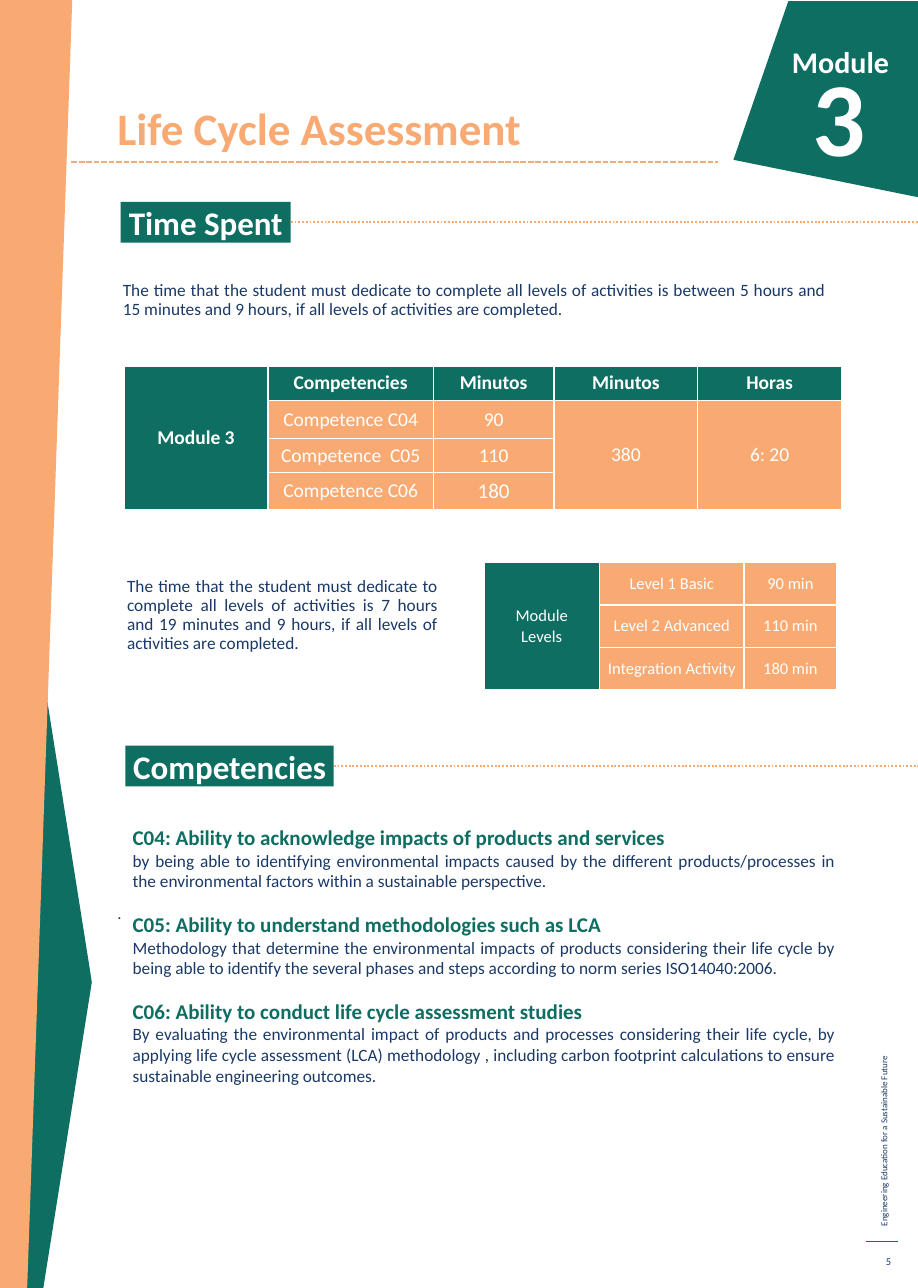
"""Build the Life Cycle Assessment module page."""
import lxml.etree
import pptx
import pptx.dml.color
import pptx.enum.dml
import pptx.enum.shapes
import pptx.enum.text
import pptx.oxml.ns
import pptx.util

Cm = pptx.util.Cm
Pt = pptx.util.Pt
ALIGN = pptx.enum.text.PP_ALIGN
ANCHOR = pptx.enum.text.MSO_ANCHOR
DASH = pptx.enum.dml.MSO_LINE
qn = pptx.oxml.ns.qn
GREEN, PEACH, NAVY, WHITE = "0E6E61", "F9AA73", "1A3966", "FFFFFF"


def rgb(value):
    return pptx.dml.color.RGBColor.from_string(value)


def write(frame, text, size=11.5, color=NAVY, bold=False, align=ALIGN.LEFT,
          anchor=ANCHOR.TOP, spacing=None, after=0):
    frame.word_wrap = True
    frame.vertical_anchor = anchor
    for line in text.split("\n"):
        paragraph = frame.add_paragraph() if frame.text else frame.paragraphs[0]
        paragraph.alignment = align
        paragraph.space_after = Pt(after)
        if spacing:
            paragraph.line_spacing = Pt(spacing)
        run = paragraph.add_run()
        run.text = line
        run.font.name = "Calibri"
        run.font.size = Pt(size)
        run.font.bold = bold
        run.font.color.rgb = rgb(color)


presentation = pptx.Presentation()
presentation.slide_width = Cm(21.59)
presentation.slide_height = Cm(30.3)
slide = presentation.slides.add_slide(presentation.slide_layouts[6])
shapes = slide.shapes

outlines = [
    (GREEN, [(1.02, 30.3), (0.58, 30.3), (0.58, 13.13), (2.11, 22.78), (2.16, 23.11)]),
    (PEACH, [(0, 0), (1.7, 0), (0.64, 30.3), (0, 30.3)]),
    (GREEN, [(21.59, 0.03), (18.54, 0.03), (17.25, 3.76), (21.59, 4.64)]),
]
for color, corners in outlines:
    points = [(Cm(x), Cm(y)) for x, y in corners]
    builder = shapes.build_freeform(*points[0])
    builder.add_line_segments(points[1:], close=True)
    shape = builder.convert_to_shape()
    shape.shadow.inherit = False
    shape.fill.solid()
    shape.fill.fore_color.rgb = rgb(color)
    shape.line.fill.background()

lines = [
    (1.68, 16.89, 3.81, PEACH, 1.25, DASH.SQUARE_DOT, None),
    (20.37, 21.13, 29.21, GREEN, 0.75, DASH.SOLID, None),
]
for heading, left, top, width in [("Time Spent", 2.84, 4.75, 4), ("Competencies", 2.95, 17.54, 4.9)]:
    label = shapes.add_shape(pptx.enum.shapes.MSO_SHAPE.RECTANGLE,
                             Cm(left), Cm(top), Cm(width), Cm(0.96))
    label.shadow.inherit = False
    label.fill.solid()
    label.fill.fore_color.rgb = rgb(GREEN)
    label.line.fill.background()
    frame = label.text_frame
    frame.margin_left = frame.margin_right = frame.margin_top = frame.margin_bottom = 0
    write(frame, heading, size=22, color=WHITE, bold=True, align=ALIGN.CENTER, anchor=ANCHOR.MIDDLE)
    lines.append((left + width, 21.59, top + 0.48, PEACH, 1.25, DASH.ROUND_DOT, label))

for start, end, y, color, weight, dash, label in lines:
    connector = shapes.add_connector(pptx.enum.shapes.MSO_CONNECTOR.STRAIGHT,
                                     Cm(start), Cm(y), Cm(end), Cm(y))
    connector.line.color.rgb = rgb(color)
    connector.line.width = Pt(weight)
    connector.line.dash_style = dash
    lxml.etree.SubElement(connector._element.spPr, qn("a:effectLst"))
    if label:
        connector.begin_connect(label, 3)

body = dict(align=ALIGN.JUSTIFY)
spaced = dict(align=ALIGN.JUSTIFY, spacing=12.8)
body_end = dict(align=ALIGN.JUSTIFY, after=13.4)
skill = dict(size=14, color=GREEN, bold=True, align=ALIGN.JUSTIFY)
badge = dict(color=WHITE, bold=True, align=ALIGN.RIGHT)
text_boxes = [
    (2.51, 0.97, 11, 2.79, [
        ("Life Cycle Assessment",
         dict(size=30, color=PEACH, bold=True, spacing=26.8, anchor=ANCHOR.BOTTOM))]),
    (16.59, 0.89, 4.57, 3.6, [("Module", dict(badge, size=20))]),
    (16.05, 1.09, 4.57, 3.6, [("3", dict(badge, size=70))]),
    (2.64, 6.48, 17.02, 3, [
        ("The time that the student must dedicate to complete all levels of activities is between "
         "5 hours and 15 minutes and 9 hours, if all levels of activities are completed.", spaced)]),
    (2.74, 13.44, 7.8, 3, [
        ("The time that the student must dedicate to complete all levels of activities is 7 hours "
         "and 19 minutes and 9 hours, if all levels of activities are completed.", spaced)]),
    (2.51, 21.13, 0.8, 0.8, [(".", dict(size=11))]),
    (2.87, 19.28, 17.02, 6.8, [
        ("C04: Ability to acknowledge impacts of products and services", skill),
        ("by being able to identifying environmental impacts caused by the different "
         "products/processes in the environmental factors within a sustainable perspective.", body_end),
        ("C05: Ability to understand methodologies such as LCA", skill),
        ("Methodology that determine the environmental impacts of products considering their life "
         "cycle by being able to identify the several phases and steps according to norm series "
         "ISO14040:2006.", body_end),
        ("C06: Ability to conduct life cycle assessment studies", skill),
        ("By evaluating the environmental impact of products and processes considering their life "
         "cycle, by applying life cycle assessment (LCA) methodology , including carbon footprint "
         "calculations to ensure sustainable engineering outcomes.", body)]),
    (20.37, 29.31, 0.84, 0.74, [("5", dict(size=7, align=ALIGN.RIGHT, anchor=ANCHOR.MIDDLE))]),
    (15.09, 23.14, 11.4, 0.51, [("Engineering Education for a Sustainable Future", dict(size=6))]),
]
for left, top, width, height, paragraphs in text_boxes:
    text_box = shapes.add_textbox(Cm(left), Cm(top), Cm(width), Cm(height))
    text_box.rotation = 270 if width / height > 20 else 0
    for text, text_format in paragraphs:
        write(text_box.text_frame, text, **text_format)

hours_rows = [
    ["Module 3", "Competencies", "Minutos", "Minutos", "Horas"],
    ["", "Competence C04", "90", "380", "6: 20"],
    ["", "Competence  C05", "110", "", ""],
    ["", "Competence C06", "180", "", ""],
]
level_rows = [
    ["Module\nLevels", "Level 1 Basic", "90 min"],
    ["", "Level 2 Advanced", "110 min"],
    ["", "Integration Activity", "180 min"],
]
tables = [
    (2.92, 8.61, [3.38, 3.89, 2.84, 3.38, 3.38], [0.8, 0.9, 0.8, 0.86], hours_rows,
     [(0, 0), (1, 3), (1, 4)], 13, True, None),
    (11.38, 13.23, [2.72, 3.4, 2.18], [1, 1, 1], level_rows, [(0, 0)], 11, False, 0.03),
]
for left, top, widths, heights, rows, merges, size, has_header, margin in tables:
    table = shapes.add_table(len(rows), len(widths), Cm(left), Cm(top),
                             Cm(sum(widths)), Cm(sum(heights))).table
    table.first_row = table.horz_banding = False
    for column, width in zip(table.columns, widths):
        column.width = Cm(width)
    for row, height in zip(table.rows, heights):
        row.height = Cm(height)
    for row, column in merges:
        table.cell(row, column).merge(table.cell(len(rows) - 1, column))
    for row, texts in enumerate(rows):
        for column, text in enumerate(texts):
            cell = table.cell(row, column)
            is_header = has_header and row == 0
            cell.fill.solid()
            cell.fill.fore_color.rgb = rgb(GREEN if is_header or column == 0 else PEACH)
            cell.vertical_anchor = ANCHOR.MIDDLE
            if margin:
                cell.margin_left = cell.margin_right = cell.margin_top = cell.margin_bottom = Cm(margin)
            if text:
                write(cell.text_frame, text, size=14 if text == "180" else size, color=WHITE,
                      bold=is_header, align=ALIGN.CENTER)
            properties = cell._tc.get_or_add_tcPr()
            for index, side in enumerate(["a:lnL", "a:lnR", "a:lnT", "a:lnB"]):
                border = lxml.etree.Element(qn(side), w=str(Pt(1)))
                fill = lxml.etree.SubElement(border, qn("a:solidFill"))
                lxml.etree.SubElement(fill, qn("a:srgbClr"), val=WHITE)
                properties.insert(index, border)

presentation.save("out.pptx")
